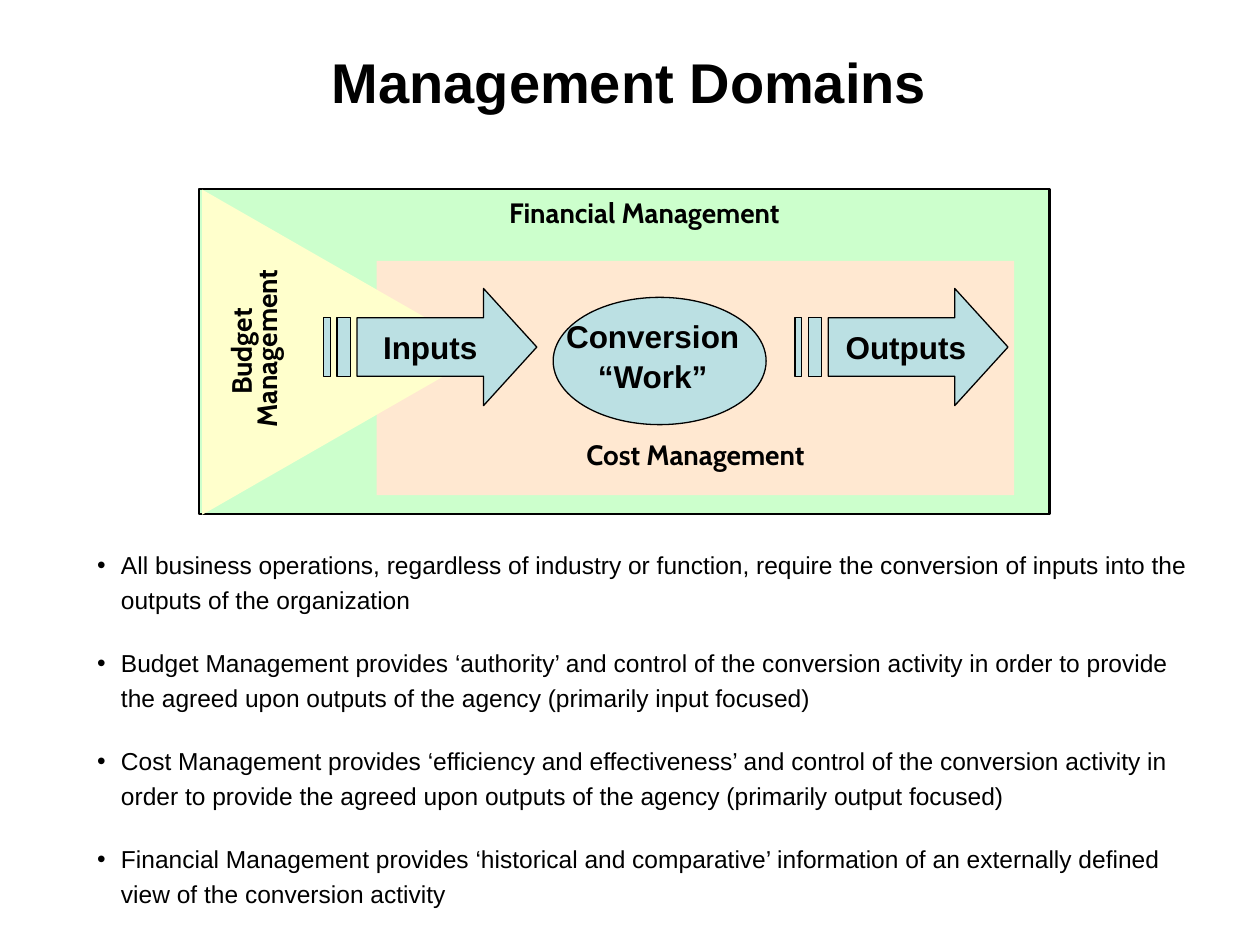
from lxml import etree
from pptx import Presentation
from pptx.dml.color import RGBColor
from pptx.enum.shapes import MSO_SHAPE
from pptx.enum.text import MSO_ANCHOR, MSO_AUTO_SIZE, PP_ALIGN
from pptx.oxml.ns import qn
from pptx.util import Inches, Pt

RECT, OVAL, TRIANGLE = MSO_SHAPE.RECTANGLE, MSO_SHAPE.OVAL, MSO_SHAPE.ISOSCELES_TRIANGLE
TOP, MIDDLE = MSO_ANCHOR.TOP, MSO_ANCHOR.MIDDLE
LEFT, CENTER = PP_ALIGN.LEFT, PP_ALIGN.CENTER
NO_FIT = MSO_AUTO_SIZE.NONE

BLACK = RGBColor(0x00, 0x00, 0x00)
GREEN = RGBColor(0xCC, 0xFF, 0xCC)
PEACH = RGBColor(0xFF, 0xE8, 0xD1)
YELLOW = RGBColor(0xFF, 0xFF, 0xCC)
BLUE = RGBColor(0xBB, 0xE0, 0xE3)

WIDTH, HEIGHT = Inches(10), Inches(7.5)
ARROW_COLS, ARROW_ROWS = 32, 4
ARROW_PARTS = [
    [(24, 0), (24, 1), (5, 1), (5, 3), (24, 3), (24, 4), (32, 2)],
    [(2, 1), (2, 3), (4, 3), (4, 1)],
    [(0, 1), (0, 3), (1, 3), (1, 1)],
]

BULLETS = [
    "All business operations, regardless of industry or function, require the "
    "conversion of inputs into the outputs of the organization",
    "Budget Management provides ‘authority’ and control of the conversion activity "
    "in order to provide the agreed upon outputs of the agency (primarily input focused)",
    "Cost Management provides ‘efficiency and effectiveness’ and control of the "
    "conversion activity in order to provide the agreed upon outputs of the agency "
    "(primarily output focused)",
    "Financial Management provides ‘historical and comparative’ information of an "
    "externally defined view of the conversion activity",
]


def share(x, y, w, h):
    return (int(WIDTH * x / 100), int(HEIGHT * y / 100),
            int(WIDTH * w / 100), int(HEIGHT * h / 100))


def place(sp, *box):
    sp.left, sp.top, sp.width, sp.height = share(*box)


def write(sp, lines, size=16, font="Cabin", bold=True, align=CENTER, anchor=TOP,
          wrap=True, spacing=None, before=0, bullet=False, pad=0.05):
    tf = sp.text_frame
    tf.auto_size = NO_FIT
    tf.word_wrap = wrap
    tf.vertical_anchor = anchor
    tf.margin_left = tf.margin_right = Inches(0.1)
    tf.margin_top = tf.margin_bottom = Inches(pad)
    for i, line in enumerate(lines):
        p = tf.add_paragraph() if i else tf.paragraphs[0]
        if bullet:
            add_bullet(p)
        p.alignment = align
        p.space_before = Pt(before if i else 0)
        if spacing:
            p.line_spacing = spacing
        r = p.add_run()
        r.text = line
        r.font.size, r.font.name, r.font.bold = Pt(size), font, bold
        r.font.color.rgb = BLACK


def add_bullet(p):
    pPr = p._p.get_or_add_pPr()
    indent = Inches(0.19)
    pPr.set("marL", str(indent))
    pPr.set("indent", str(-indent))
    color = etree.SubElement(pPr, qn("a:buClr"))
    etree.SubElement(color, qn("a:srgbClr"), val=str(BLACK))
    etree.SubElement(pPr, qn("a:buChar"), char="•")
    tabs = etree.SubElement(pPr, qn("a:tabLst"))
    etree.SubElement(tabs, qn("a:tab"), pos=str(indent), algn="l")


def paint(sp, fill, line):
    sp.shadow.inherit = False
    sp.fill.solid()
    sp.fill.fore_color.rgb = fill
    if line:
        sp.line.color.rgb = BLACK
        sp.line.width = Pt(line)
    else:
        sp.line.fill.background()


def add_area(s, kind, box, fill, line=0, rotation=0):
    sp = s.shapes.add_shape(kind, *share(*box))
    sp.rotation = rotation
    paint(sp, fill, line)


def add_label(s, box, lines, rotation=0, **style):
    sp = s.shapes.add_textbox(*share(*box))
    sp.rotation = rotation
    write(sp, lines, **style)


def add_striped_arrow(s, box, text):
    x, y, w, h = share(*box)
    fb = None
    for part in ARROW_PARTS:
        points = [(x + w * c // ARROW_COLS, y + h * r // ARROW_ROWS) for c, r in part]
        if fb is None:
            fb = s.shapes.build_freeform(*points[0])
        else:
            fb.move_to(*points[0])
        fb.add_line_segments(points[1:], close=True)
    sp = fb.convert_to_shape()
    paint(sp, BLUE, 0.75)
    write(sp, [text], size=18, font="Arial", anchor=MIDDLE, wrap=False)


def main():
    prs = Presentation()
    prs.slide_width, prs.slide_height = WIDTH, HEIGHT
    s = prs.slides.add_slide(prs.slide_layouts[1])

    title, body = s.shapes.title, s.placeholders[1]
    place(title, 13.3, 3.6, 73.3, 8.53)
    write(title, ["Management Domains"], size=32, font="Arial", spacing=1.2, pad=0)
    place(body, 6.7, 56.93, 89.2, 38.67)
    write(body, BULLETS, size=14, font="Arial", bold=False, align=LEFT,
          spacing=1.2, before=15.7, bullet=True)

    add_area(s, RECT, (15.8, 20, 67.5, 34.4), GREEN, line=1.5)
    add_label(s, (27.1, 20, 48.1, 4.93), ["Financial Management"])
    add_area(s, RECT, (29.9, 27.6, 50.6, 24.8), PEACH)
    add_label(s, (29.9, 45.6, 50.6, 4.93), ["Cost Management"])
    add_area(s, TRIANGLE, (14.4, 22.27, 25.8, 30), YELLOW, rotation=90)
    add_label(s, (12.1, 33.53, 16.6, 6.67), ["Budget ", "Management"], rotation=270,
              anchor=MIDDLE, wrap=False, spacing=0.75)

    add_area(s, OVAL, (43.9, 31.47, 16.9, 13.47), BLUE, line=0.75)
    add_label(s, (43.9, 32.93, 15.8, 9.33), ["Conversion", "“Work”"], size=18,
              font="Arial", wrap=False, before=1)
    for x, text in ((25.7, "Inputs"), (63.1, " Outputs")):
        add_striped_arrow(s, (x, 30.53, 16.9, 12.4), text)

    prs.save("out.pptx")


if __name__ == "__main__":
    main()
